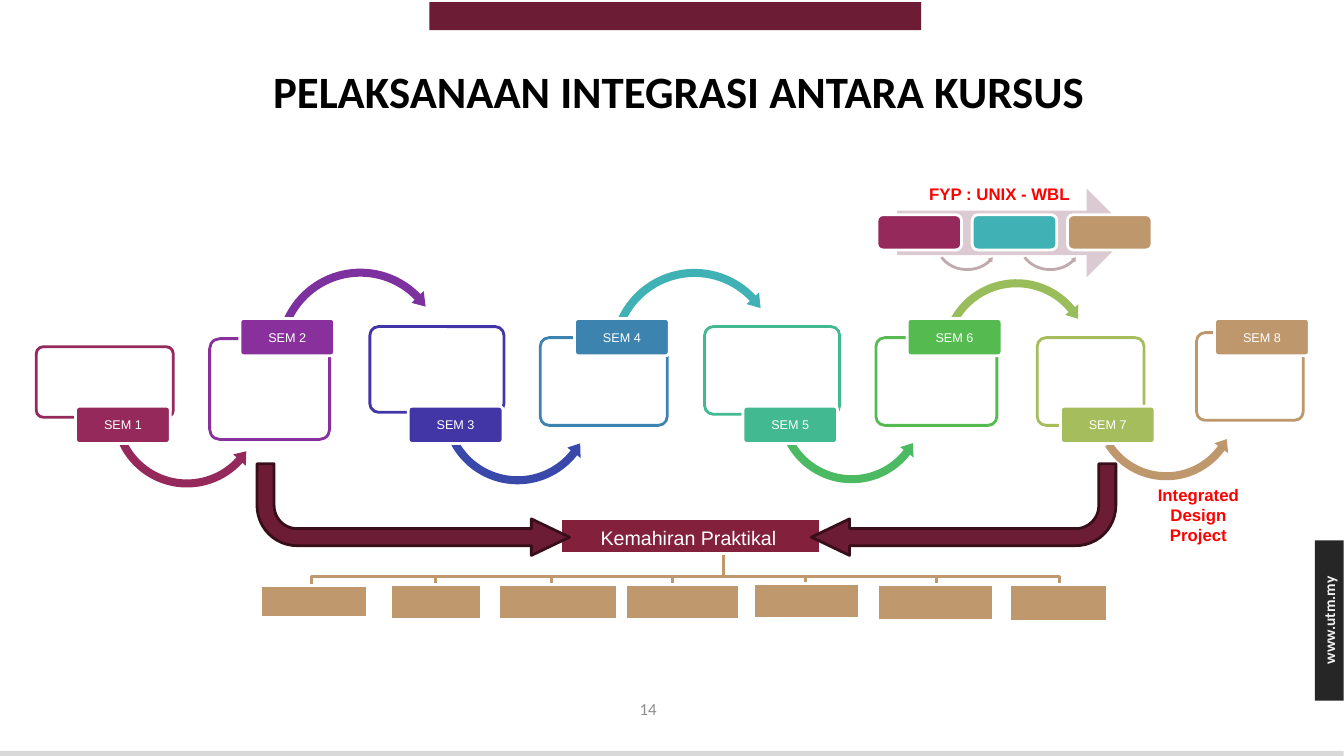
import math
import pptx
import pptx.util
import pptx.oxml.ns
import pptx.dml.color
import pptx.enum.shapes
import pptx.enum.text

KIND = pptx.enum.shapes.MSO_SHAPE
ALIGN = pptx.enum.text.PP_ALIGN
SIDE = pptx.enum.text.MSO_ANCHOR
HUES = {
    "wine": "6C1D35", "dark": "370E19", "slab": "83203C", "tan": "BF996D",
    "sand": "BE986C", "rose": "95295C", "plum": "89309D", "grape": "7D319F",
    "ink": "4236A7", "blue": "3948A9", "sea": "3C83B0", "teal": "40B1B4",
    "mint": "43B992", "leaf": "4CBA62", "green": "55BB50", "lime": "99BD5B",
    "moss": "A6BD5D", "pale": "DBCAD1", "dusk": "C0AAAD", "red": "FF0000",
    "white": "FFFFFF", "snow": "F2F2F2", "black": "000000", "coal": "262626",
    "grey": "8C8C8C", "mist": "D9D9D9",
}
HUES = {name: pptx.dml.color.RGBColor.from_string(hue) for name, hue in HUES.items()}

deck = pptx.Presentation()
deck.slide_height = pptx.util.Inches(7.5)
deck.slide_width = deck.slide_height * 16 // 9
cell = deck.slide_height / 75
slide = deck.slides.add_slide(deck.slide_layouts[5])
shapes = slide.shapes
qn = pptx.oxml.ns.qn


def draw(text, x, y, wide, high, kind=None, fill=None, line=None, adj=(), turn=0,
         size=12, font="Arial", hue="white", bold=False,
         align=ALIGN.CENTER, side=SIDE.MIDDLE, pad=(1, 0.5), shape=None):
    spot = [round(n * cell) for n in (x, y, wide, high)]
    if kind:
        shape = shapes.add_shape(kind, *spot)
        shape.shadow.inherit = False
        shape.fill.solid()
        shape.fill.fore_color.rgb = HUES[fill]
        if line:
            shape.line.color.rgb = HUES[line]
            shape.line.width = pptx.util.Pt(2)
        else:
            shape.line.fill.background()
        for i, part in enumerate(adj):
            shape.adjustments[i] = part
    elif not shape:
        shape = shapes.add_textbox(*spot)
    shape.left, shape.top, shape.width, shape.height = spot
    shape.rotation = turn
    if text:
        frame = shape.text_frame
        frame.text = text
        frame.word_wrap = True
        frame.auto_size = pptx.enum.text.MSO_AUTO_SIZE.NONE
        frame.vertical_anchor = side
        frame.margin_left = frame.margin_right = round(pad[0] * cell)
        frame.margin_top = frame.margin_bottom = round(pad[1] * cell)
        para = frame.paragraphs[0]
        para.alignment = align
        face = para.runs[0].font
        face.size, face.name, face.bold = pptx.util.Pt(size), font, bold
        face.color.rgb = HUES[hue]
    return shape


def sweep(x, y, wide, high, start, tip, half, hue):
    base = tip + math.copysign(9, start - tip)
    mid = (start + base) / 2
    pull = 4 / 3 * math.tan(math.radians(mid - start) / 4)
    ring = [(start, half, 0), (start, -half, 0),
            (start, -half, pull), (mid, -half, -pull), (mid, -half, 0),
            (mid, -half, pull), (base, -half, -pull), (base, -half, 0),
            (base, -2.1 * half, 0), (tip, 0, 0), (base, 2.1 * half, 0), (base, half, 0),
            (base, half, -pull), (mid, half, pull), (mid, half, 0),
            (mid, half, -pull), (start, half, pull), (start, half, 0)]
    dots = []
    for turn, gap, lean in ring:
        cos, sin = math.cos(math.radians(turn)), math.sin(math.radians(turn))
        dots.append(((x + (wide + gap) * (cos - lean * sin)) * cell,
                     (y + (high + gap) * (sin + lean * cos)) * cell))
    form = shapes.build_freeform(*dots[0])
    form.add_line_segments(dots[1:])
    curve = form.convert_to_shape()
    curve.shadow.inherit = False
    curve.fill.solid()
    curve.fill.fore_color.rgb = HUES[hue]
    curve.line.fill.background()
    trace = next(curve.element.iter(qn("a:path")))
    legs = trace.findall(qn("a:lnTo"))
    for first in (1, 4, 11, 14):
        bend = trace.makeelement(qn("a:cubicBezTo"), {})
        legs[first].addprevious(bend)
        for leg in legs[first:first + 3]:
            bend.append(leg[0])
            trace.remove(leg)
    left, top = curve.left, curve.top
    across, down = wide / 0.448, high / 0.448
    curve.left, curve.top = round((x - across / 2) * cell), round((y - down / 2) * cell)
    curve.width, curve.height = round(across * cell), round(down * cell)
    for dot in trace.iter(qn("a:pt")):
        dot.set("x", str(int(dot.get("x")) + left - curve.left))
        dot.set("y", str(int(dot.get("y")) + top - curve.top))
    trace.set("w", str(curve.width))
    trace.set("h", str(curve.height))


draw("", 42.6, 0.2, 48.8, 2.8, KIND.RECTANGLE, "wine")
draw("", 0, 74.5, 133.3, 0.5, KIND.RECTANGLE, "mist")
draw("", 130.45, 53.6, 2.85, 15.9, KIND.RECTANGLE, "coal")
draw("www.utm.my", 124.3, 60.1, 15.1, 2.9, turn=270, size=11, font="Calibri",
     hue="snow", bold=True)
draw("PELAKSANAAN INTEGRASI ANTARA KURSUS", 26.1, 5.85, 86.1, 6.4, shape=shapes.title,
     size=32, font="Calibri", hue="black", bold=True, align=ALIGN.LEFT, side=SIDE.TOP)

terms = [
    ("rose", (3.6, 34.4, 13.6, 7), 7.5, "rose", (18.55, 40.95, 7.02, 154, 33)),
    ("plum", (20.8, 33.6, 11.9, 10), 23.8, "grape", (35.75, 34.95, 7.9, 205, 325)),
    ("ink", (36.7, 32.4, 13.3, 8.5), 40.5, "blue", (51.35, 40.55, 7.1, 151, 29)),
    ("sea", (53.6, 33.5, 12.6, 8.7), 57, "teal", (68.9, 35, 7.92, 205, 326)),
    ("mint", (69.9, 32.4, 13.4, 8.7), 73.7, "leaf", (84.5, 40.6, 6.95, 151, 29)),
    ("green", (86.9, 33.5, 12, 8.7), 90, "lime", (100.85, 35.15, 7.05, 210, 330)),
    ("moss", (102.9, 33.5, 10.6, 8.7), 105.2, "sand", (115.7, 40.5, 6.75, 148, 27)),
    ("sand", (118.7, 33, 10.6, 8.7), 120.5, None, None),
]
for num, (hue, card, left, tint, arc) in enumerate(terms, 1):
    draw("", *card, KIND.ROUNDED_RECTANGLE, "white", hue, (0.1,))
    if arc:
        x, y, ray, start, tip = arc
        sweep(x, y, ray, ray, start, tip, 0.4, tint)
    draw(f"SEM {num}", left, 40.3 if num % 2 else 31.6, 9.4, 3.7,
         KIND.ROUNDED_RECTANGLE, hue, "white", (0.1,), size=9, pad=(0.2, 0.1))

draw("", 89, 18.7, 23.2, 8.8, KIND.RIGHT_ARROW, "pale", adj=(0.5, 0.5))
for i, hue in enumerate(("rose", "teal", "sand")):
    draw("", 87 + 9.45 * i, 21.3, 8.4, 3.5, KIND.ROUNDED_RECTANGLE, hue, "white", (0.167,))
for x in (95.95, 104.2):
    sweep(x, 24.15, 3, 2.6, 148, 32, 0.14, "dusk")

for x in (105.1, 92.9, 79.9, 66.7, 54.7, 43.2, 30.9):
    form = shapes.build_freeform(71.8 * cell, 54.9 * cell)
    form.add_line_segments([(a * cell, b * cell) for a, b in
                            ((71.8, 57.2), (x, 57.2), (x, 58))], close=False)
    link = form.convert_to_shape()
    link.shadow.inherit = False
    link.fill.background()
    link.line.color.rgb = HUES["tan"]
    link.line.width = pptx.util.Pt(2)

draw("", 55.6, 51.4, 25.8, 3.5, KIND.RECTANGLE, "slab", "white")
draw("Kemahiran Praktikal", 55.4, 51.6, 25.8, 3.5, size=14, pad=(0.1, 0.1))
skills = [(25.9, 58.1, 10.6, 3.2), (38.7, 58, 9.1, 3.5), (49.5, 58, 11.8, 3.5),
          (62.1, 58, 11.3, 3.5), (87.1, 58, 11.5, 3.6), (100.2, 58, 9.7, 3.7),
          (74.8, 57.9, 10.5, 3.5)]
for spot in skills:
    draw("", *spot, KIND.RECTANGLE, "tan", "white")

draw("FYP : UNIX - WBL", 91.2, 17.7, 17.8, 3, hue="red", bold=True,
     align=ALIGN.LEFT, side=SIDE.TOP)
draw("Integrated Design Project", 112.1, 47.6, 13.6, 7.1, hue="red", bold=True,
     side=SIDE.TOP)
for x, wide, flip in ((25.5, 31, "1"), (80.5, 30.2, "0")):
    bend = draw("", x, 46, wide, 9.1, KIND.BENT_ARROW, "wine", "dark",
                (0.186, 0.199, 0.415, 0.438), turn=180)
    bend.element.spPr.find(qn("a:xfrm")).set("flipH", flip)

draw("14", 49.3, 68.3, 30, 4, font="Calibri", hue="grey")

deck.save("out.pptx")
